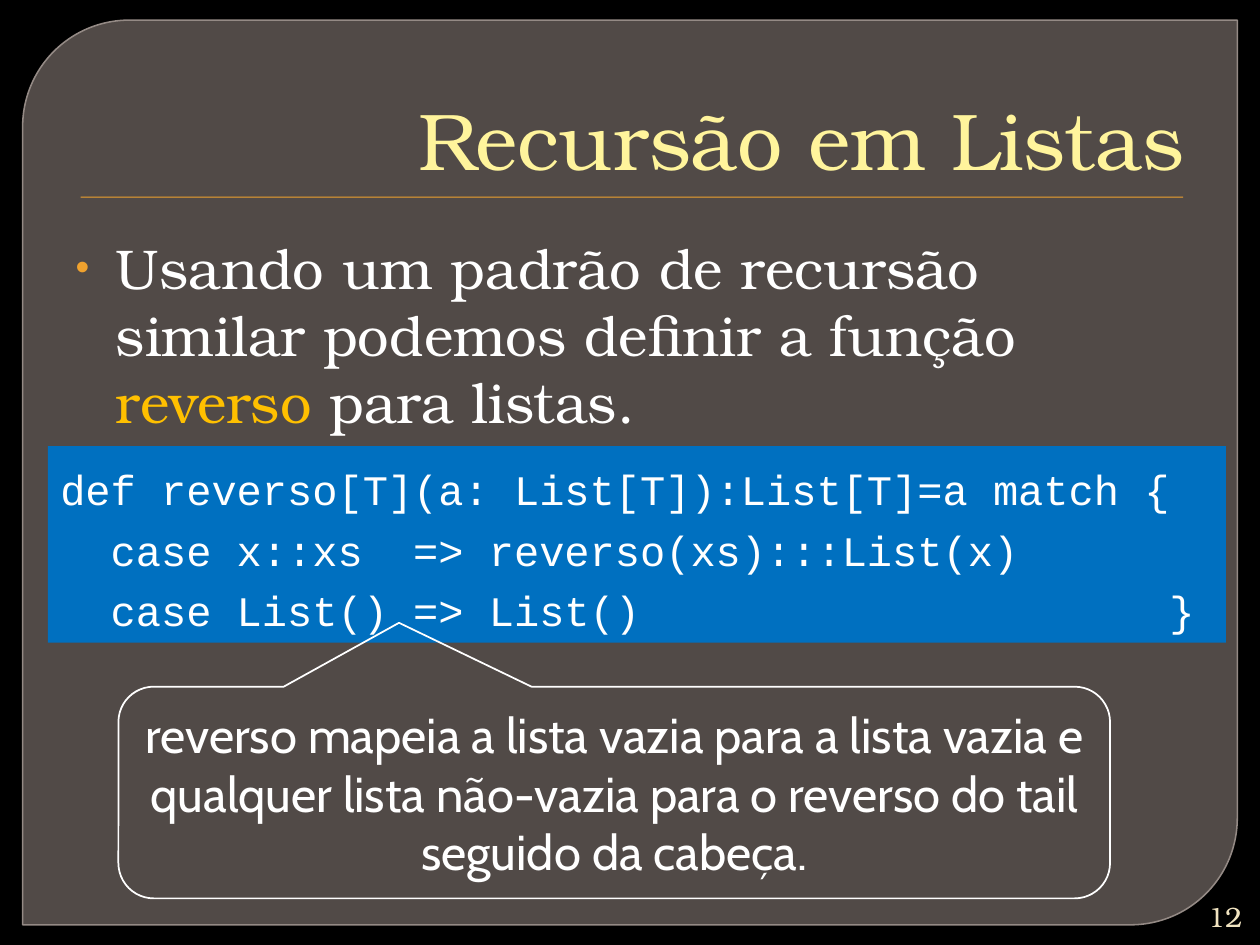
from lxml import etree
from pptx import Presentation
from pptx import util as u
from pptx.dml import color
from pptx.enum import shapes, text
from pptx.oxml import ns

SERIF = "TeX Gyre Bonum"
WHITE = "FFFFFF"
GOLD = "F0A22E"
CODE = [
    "def reverso[T](a: List[T]):List[T]=a match {",
    "  case x::xs  => reverso(xs):::List(x)",
    "  case List() => List()                     }",
]


def rgb(code):
    return color.RGBColor.from_string(code)


def place(item, box):
    item.left, item.top, item.width, item.height = map(u.Inches, box)


def fade(part, share):
    node = part._xPr.find(".//" + ns.qn("a:srgbClr"))
    etree.SubElement(node, ns.qn("a:alpha"), val=str(share * 1000))


def style(para, face, size, tint, align=text.PP_ALIGN.LEFT):
    para.alignment = align
    para.font.name = face
    para.font.size = u.Pt(size)
    para.font.color.rgb = rgb(tint)


def indent(para, size):
    props = para._p.get_or_add_pPr()
    props.set("marL", str(u.Inches(size)))
    props.set("indent", str(-u.Inches(size)))
    return props


def shape(slide, kind, box, fill=None, line=None, width=1):
    item = slide.shapes.add_shape(kind, *map(u.Inches, box))
    item.shadow.inherit = False
    if fill:
        item.fill.solid()
        item.fill.fore_color.rgb = rgb(fill)
    else:
        item.fill.background()
    if line:
        item.line.color.rgb = rgb(line)
        item.line.width = u.Pt(width)
    else:
        item.line.fill.background()
    return item


def panel(slide, box):
    left, top, width, height = box
    kind = shapes.MSO_SHAPE
    back = shape(slide, kind.ROUND_2_DIAG_RECTANGLE, box, "7D726E", "948A85", 0.87)
    back.adjustments[0] = 0.118
    back.adjustments[1] = 0
    fade(back.fill, 65)
    rule = shape(slide, kind.RECTANGLE,
                 (left + 0.46, top + 1.4, width - 0.89, 0.01), GOLD)
    tree = slide.shapes._spTree
    tree.insert(2, back._element)
    tree.insert(3, rule._element)


def title(slide, box):
    item = slide.shapes.title
    place(item, box)
    frame = item.text_frame
    frame.text = "Recursão em Listas"
    frame.auto_size = text.MSO_AUTO_SIZE.NONE
    frame.vertical_anchor = text.MSO_ANCHOR.BOTTOM
    para = frame.paragraphs[0]
    indent(para, 0.06)
    style(para, SERIF, 46, "FFF49C", text.PP_ALIGN.RIGHT)


def body(slide, box):
    item = slide.placeholders[1]
    place(item, box)
    frame = item.text_frame
    frame.auto_size = text.MSO_AUTO_SIZE.NONE
    para = frame.paragraphs[0]
    para.space_before = u.Pt(0)
    props = indent(para, 0.32)
    tint = etree.SubElement(props, ns.qn("a:buClr"))
    etree.SubElement(tint, ns.qn("a:srgbClr"), val=GOLD)
    etree.SubElement(props, ns.qn("a:buSzPct"), val="70000")
    etree.SubElement(props, ns.qn("a:buChar"), char="•")
    style(para, SERIF, 32, WHITE)
    for words, hue in (
        ("Usando um padrão de recursão similar podemos definir a função ", WHITE),
        ("reverso ", "FFC000"),
        ("para listas.", WHITE),
    ):
        run = para.add_run()
        run.text = words
        run.font.color.rgb = rgb(hue)


def number(slide, box):
    frame = slide.shapes.add_textbox(*map(u.Inches, box)).text_frame
    frame.word_wrap = True
    frame.margin_left = frame.margin_right = 0
    frame.vertical_anchor = text.MSO_ANCHOR.MIDDLE
    frame.text = "12"
    style(frame.paragraphs[0], SERIF, 16, "F0E3C0", text.PP_ALIGN.RIGHT)


def code(slide, box):
    item = shape(slide, shapes.MSO_SHAPE.RECTANGLE, box, "0070C0")
    frame = item.text_frame
    frame.word_wrap = False
    frame.vertical_anchor = text.MSO_ANCHOR.MIDDLE
    frame.text = "\n".join(CODE)
    for para in frame.paragraphs:
        para.line_spacing = 1.2
        style(para, "Courier New", 24, WHITE)


def callout(slide, box):
    item = shape(slide, shapes.MSO_SHAPE.ROUNDED_RECTANGULAR_CALLOUT, box, line=WHITE)
    for spot, value in enumerate((-0.217, -0.802, 0.167)):
        item.adjustments[spot] = value
    frame = item.text_frame
    frame.word_wrap = True
    frame.vertical_anchor = text.MSO_ANCHOR.MIDDLE
    frame.text = ("reverso mapeia a lista vazia para a lista vazia e qualquer "
                  "lista não-vazia para o reverso do tail seguido da cabeça.")
    style(frame.paragraphs[0], "Cabin", 28, WHITE, text.PP_ALIGN.CENTER)


def main():
    deck = Presentation()
    deck.slide_width, deck.slide_height = u.Inches(10), u.Inches(7.5)
    slide = deck.slides.add_slide(deck.slide_layouts[1])
    slide.background.fill.solid()
    slide.background.fill.fore_color.rgb = rgb("000000")
    panel(slide, (0.18, 0.16, 9.64, 7.18))
    title(slide, (0.5, 0.28, 9, 1.25))
    body(slide, (0.5, 1.8, 9, 4.95))
    number(slide, (9.45, 7.12, 0.41, 0.3))
    code(slide, (0.38, 3.54, 9.35, 1.56))
    callout(slide, (0.94, 5.45, 7.87, 1.68))
    deck.save("out.pptx")


if __name__ == "__main__":
    main()
